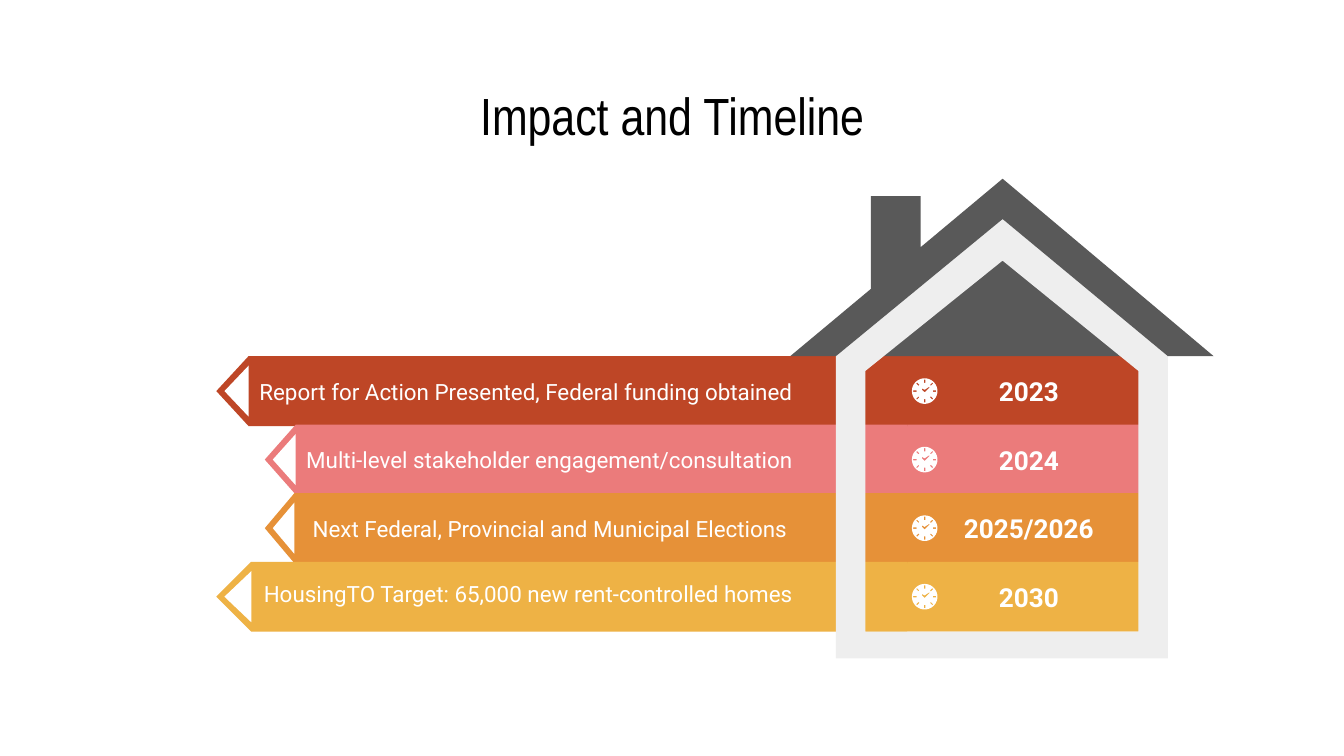
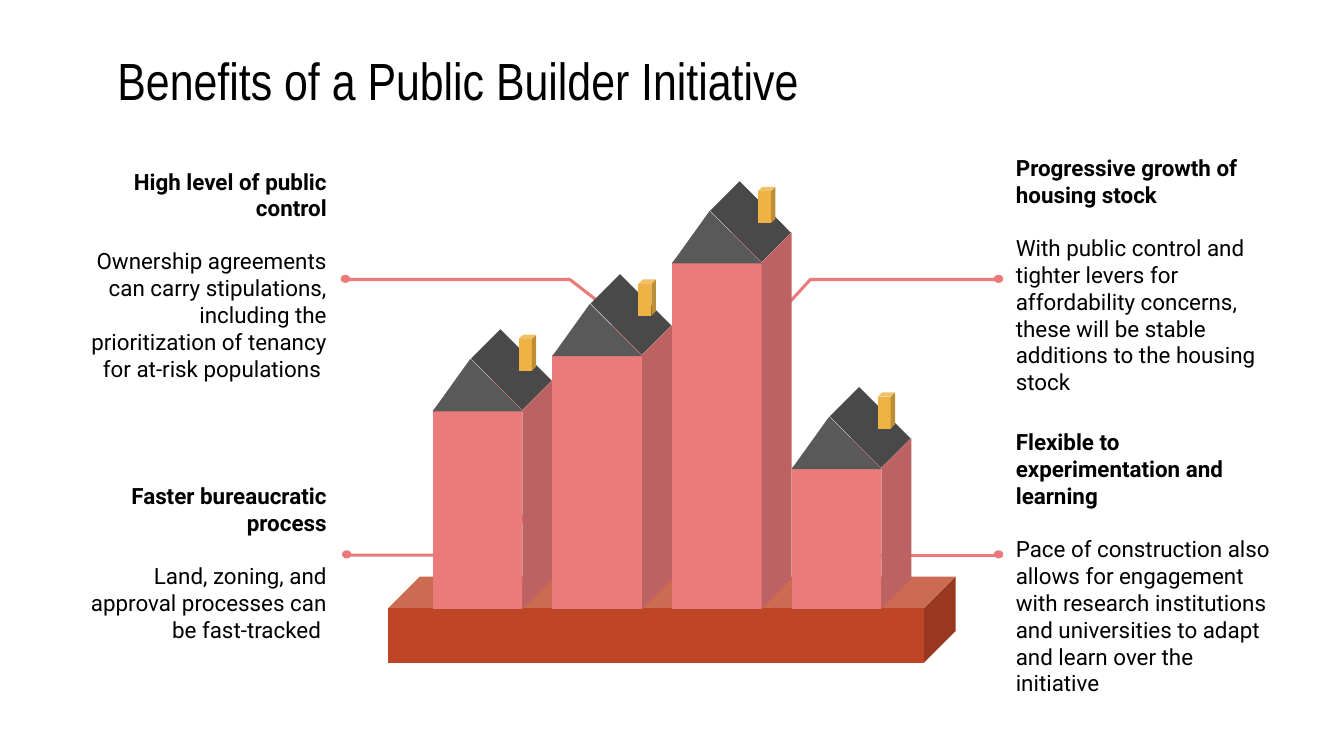
import math
from dataclasses import dataclass

import pptx
import pptx.dml.color
import pptx.enum.shapes
import pptx.enum.text
import pptx.oxml
import pptx.shapes.base
import pptx.slide
import pptx.text.text
import pptx.util

RGBColor = pptx.dml.color.RGBColor
Shape = pptx.enum.shapes.MSO_SHAPE
Align = pptx.enum.text.PP_ALIGN
Anchor = pptx.enum.text.MSO_ANCHOR
Slide = pptx.slide.Slide
Base = pptx.shapes.base.BaseShape
Point = tuple[float, float]

BLACK = RGBColor(0x00, 0x00, 0x00)
WHITE = RGBColor(0xFF, 0xFF, 0xFF)
RUST = RGBColor(0xBE, 0x46, 0x26)
PINK = RGBColor(0xEB, 0x7B, 0x7B)
ORANGE = RGBColor(0xE6, 0x91, 0x38)
GOLD = RGBColor(0xEE, 0xB2, 0x45)
SLATE = RGBColor(0x59, 0x59, 0x59)
COAL = RGBColor(0x4A, 0x49, 0x49)
PALE = RGBColor(0xEE, 0xEE, 0xEE)
HEAD_FONT = "Arial Narrow"
TEXT_FONT = "Roboto"

ROW_TOP, ROW_STEP, ROW_HIGH = 2.65, 0.51, 0.52
HOUSE_LEFT, HOUSE_STEP, GROUND = 3.22, 0.89, 4.53
ROOFS = (2.67, 2.26, 1.57, 3.1)


@dataclass(frozen=True)
class Row:
    year: str
    text: str
    color: RGBColor
    tip: float
    neck: float
    left: float
    anchor: Anchor = Anchor.MIDDLE


@dataclass(frozen=True)
class Note:
    head: str
    text: str
    left: float
    top: float
    align: Align


@dataclass(frozen=True)
class Lead:
    dot: Point
    points: tuple[Point, ...]


ROWS = (
    Row("2023", "Report for Action Presented, Federal funding obtained",
        RUST, 1.61, 1.85, 1.44),
    Row("2024", "Multi-level stakeholder engagement/consultation",
        PINK, 1.97, 2.2, 1.88),
    Row("2025/2026", "Next Federal, Provincial and Municipal Elections ",
        ORANGE, 1.97, 2.19, 2.12),
    Row("2030", "HousingTO Target: 65,000 new rent-controlled homes",
        GOLD, 1.61, 1.87, 1.7, Anchor.TOP),
)

NOTES = (
    Note("High level of public control",
         "Ownership agreements can carry stipulations, including the "
         "prioritization of tenancy for at-risk populations ",
         0.42, 1.68, Align.RIGHT),
    Note("Faster bureaucratic process",
         "Land, zoning, and approval processes can be fast-tracked ",
         0.42, 3.82, Align.RIGHT),
    Note("Progressive growth of housing stock",
         "With public control and tighter levers for affordability concerns, "
         "these will be stable additions to the housing stock",
         7.46, 1.68, Align.LEFT),
    Note("Flexible to experimentation and learning",
         "Pace of construction also allows for engagement with research "
         "institutions and universities to adapt and learn over the initiative",
         7.46, 3.82, Align.LEFT),
)

LEADS = (
    Lead((2.57, 2.08), ((2.56, 2.08), (4.24, 2.08), (4.55, 2.32))),
    Lead((7.43, 2.08), ((7.42, 2.08), (6.03, 2.08), (5.81, 2.32))),
    Lead((2.58, 4.13), ((2.56, 4.13), (3.77, 4.13), (4.23, 3.08))),
    Lead((7.43, 4.13), ((7.43, 4.13), (6.47, 4.13))),
)


def inch(value: float) -> pptx.util.Length:
    return pptx.util.Cm(value * 2.54)


def paint(shape: Base, color: RGBColor) -> Base:
    shape.shadow.inherit = False
    shape.fill.solid()
    shape.fill.fore_color.rgb = color
    shape.line.fill.background()
    return shape


def place(slide: Slide, kind: Shape, color: RGBColor, left: float, top: float,
          wide: float, high: float, turn: float = 0) -> Base:
    shape = slide.shapes.add_shape(
        kind, inch(left), inch(top), inch(wide), inch(high))
    shape.rotation = turn
    return paint(shape, color)


def trace(slide: Slide, *paths: list[Point], close: bool = True) -> Base:
    first, *rest = [[(inch(x), inch(y)) for x, y in path] for path in paths]
    pen = slide.shapes.build_freeform(*first[0], scale=1.0)
    pen.add_line_segments(first[1:], close=close)
    for path in rest:
        pen.move_to(*path[0])
        pen.add_line_segments(path[1:], close=close)
    return pen.convert_to_shape()


def frame(shape: Base, anchor: Anchor, left: float = 0.1) -> None:
    body = shape.text_frame
    body.word_wrap = True
    body.auto_size = pptx.enum.text.MSO_AUTO_SIZE.NONE
    body.vertical_anchor = anchor
    body.margin_left = inch(left)
    body.margin_top = body.margin_right = body.margin_bottom = inch(0.1)


def style(para: pptx.text.text._Paragraph, text: str, size: float,
          color: RGBColor, align: Align, bold: bool = False,
          face: str = TEXT_FONT) -> None:
    para.text = text
    para.alignment = align
    para.font.name = face
    para.font.size = pptx.util.Pt(size)
    para.font.bold = bold
    para.font.color.rgb = color


def label(slide: Slide, left: float, top: float, wide: float, high: float,
          anchor: Anchor) -> Base:
    box = slide.shapes.add_textbox(
        inch(left), inch(top), inch(wide), inch(high))
    frame(box, anchor)
    return box


def start(deck: pptx.presentation.Presentation, text: str, left: float,
          top: float, wide: float) -> Slide:
    slide = deck.slides.add_slide(deck.slide_layouts[5])
    title = slide.shapes.title
    title.left, title.top = inch(left), inch(top)
    title.width, title.height = inch(wide), inch(0.53)
    frame(title, Anchor.MIDDLE)
    style(title.text_frame.paragraphs[0], text, 28, BLACK, Align.CENTER,
          face=HEAD_FONT)
    return slide


def clock(slide: Slide, x: float, y: float) -> None:
    def spot(far: float, angle: float, side: float = 0) -> Point:
        cos, sin = math.cos(angle), math.sin(angle)
        return x + far * cos - side * sin, y + far * sin + side * cos

    rim = [spot(0.095, math.radians(turn)) for turn in range(0, 360, 10)]
    ticks = [
        [spot(far, math.radians(turn), side) for far, side in
         ((0.06, -0.005), (0.085, -0.005), (0.085, 0.005), (0.06, 0.005))]
        for turn in range(0, 360, 45)
    ]
    hands = [(x + dx, y + dy) for dx, dy in
             ((0.03, -0.03), (0.04, -0.03), (0, 0.01),
              (-0.02, -0.01), (-0.02, -0.02), (0, -0.01))]
    paint(trace(slide, rim, hands, *ticks), WHITE)


def band(slide: Slide, row: Row, top: float) -> None:
    mid, base = top + ROW_HIGH / 2, top + ROW_HIGH
    paint(trace(slide, [(row.tip, mid), (row.neck, top), (6.75, top),
                        (6.75, base), (row.neck, base)]), row.color)
    paint(trace(slide, [(row.neck, mid - 0.19), (row.tip + 0.06, mid),
                        (row.neck, mid + 0.19)]), WHITE)


def home(slide: Slide) -> None:
    place(slide, Shape.RIGHT_TRIANGLE, SLATE, 6.76, 1.95, 1.4, 1.4, 135)
    walls = [(8.69, 2.65), (8.69, 4.9), (6.22, 4.9), (6.22, 2.65), (7.46, 1.63)]
    space = [(8.47, 2.76), (7.46, 1.94), (6.44, 2.76), (6.44, 4.7), (8.47, 4.7)]
    paint(trace(slide, walls, space), PALE)
    paint(trace(slide, [
        (5.88, 2.65), (6.22, 2.65), (7.46, 1.63), (8.69, 2.65), (9.03, 2.65),
        (7.46, 1.33), (6.85, 1.84), (6.85, 1.46), (6.48, 1.46), (6.48, 2.15),
    ]), SLATE)


def timeline(deck: pptx.presentation.Presentation) -> None:
    slide = start(deck, "Impact and Timeline", 3.12, 0.59, 3.76)
    lines = [(row, ROW_TOP + ROW_STEP * i) for i, row in enumerate(ROWS)]
    for row, top in lines:
        cell = place(slide, Shape.RECTANGLE, row.color, 6.38, top, 2.15, ROW_HIGH)
        frame(cell, Anchor.MIDDLE, 0.5)
        style(cell.text_frame.paragraphs[0], row.year, 14, WHITE,
              Align.CENTER, True)
    for row, top in lines:
        band(slide, row, top)
    home(slide)
    for row, top in lines:
        box = label(slide, row.left, top + 0.04, 6 - row.left, 0.44, row.anchor)
        style(box.text_frame.paragraphs[0], row.text, 12, WHITE, Align.RIGHT)
        clock(slide, 6.88, top + 0.26)


def leader(slide: Slide, lead: Lead) -> None:
    if len(lead.points) == 2:
        ends = [inch(value) for point in lead.points for value in point]
        line = slide.shapes.add_connector(
            pptx.enum.shapes.MSO_CONNECTOR.STRAIGHT, *ends)
        line._element.spPr.append(pptx.oxml.parse_xml(
            '<a:effectLst xmlns:a='
            '"http://schemas.openxmlformats.org/drawingml/2006/main"/>'))
    else:
        line = trace(slide, list(lead.points), close=False)
        line.shadow.inherit = False
        line.fill.background()
    line.line.color.rgb = PINK
    line.line.width = pptx.util.Pt(1.64)
    x, y = lead.dot
    dot = place(slide, Shape.OVAL, PINK, x - 0.03, y - 0.03, 0.06, 0.05)
    dot.line.color.rgb = PINK
    dot.line.width = pptx.util.Pt(0.75)


def tower(slide: Slide, left: float, roof: float) -> None:
    top = roof + 0.16
    place(slide, Shape.CUBE, PINK, left, top, HOUSE_STEP, GROUND - top)
    place(slide, Shape.RECTANGLE, COAL, left + 0.43, roof - 0.19, 0.31, 0.54, 315)
    place(slide, Shape.CUBE, GOLD, left + 0.64, roof - 0.18, 0.13, 0.27)
    paint(trace(slide, [(left + 0.28, roof), (left + 0.67, roof + 0.39),
                        (left, roof + 0.39)]), SLATE)


def benefits(deck: pptx.presentation.Presentation) -> None:
    slide = start(deck, "Benefits of a Public Builder Initiative",
                  0.17, 0.33, 6.47)
    for note in NOTES:
        body = label(slide, note.left, note.top, 2.11, 0.73,
                     Anchor.MIDDLE).text_frame
        style(body.paragraphs[0], note.head, 12, BLACK, note.align, True)
        para = body.add_paragraph()
        para.space_before = pptx.util.Pt(14)
        style(para, note.text, 12, BLACK, note.align)
    base = place(slide, Shape.CUBE, RUST, 2.89, 4.29, 4.22, 0.64)
    base.adjustments[0] = 0.365
    for lead in LEADS:
        leader(slide, lead)
    for i, roof in enumerate(ROOFS):
        tower(slide, HOUSE_LEFT + HOUSE_STEP * i, roof)


def main() -> None:
    deck = pptx.Presentation()
    deck.slide_width = pptx.util.Cm(25.4)
    deck.slide_height = deck.slide_width * 9 // 16
    timeline(deck)
    benefits(deck)
    deck.save("out.pptx")


if __name__ == "__main__":
    main()
